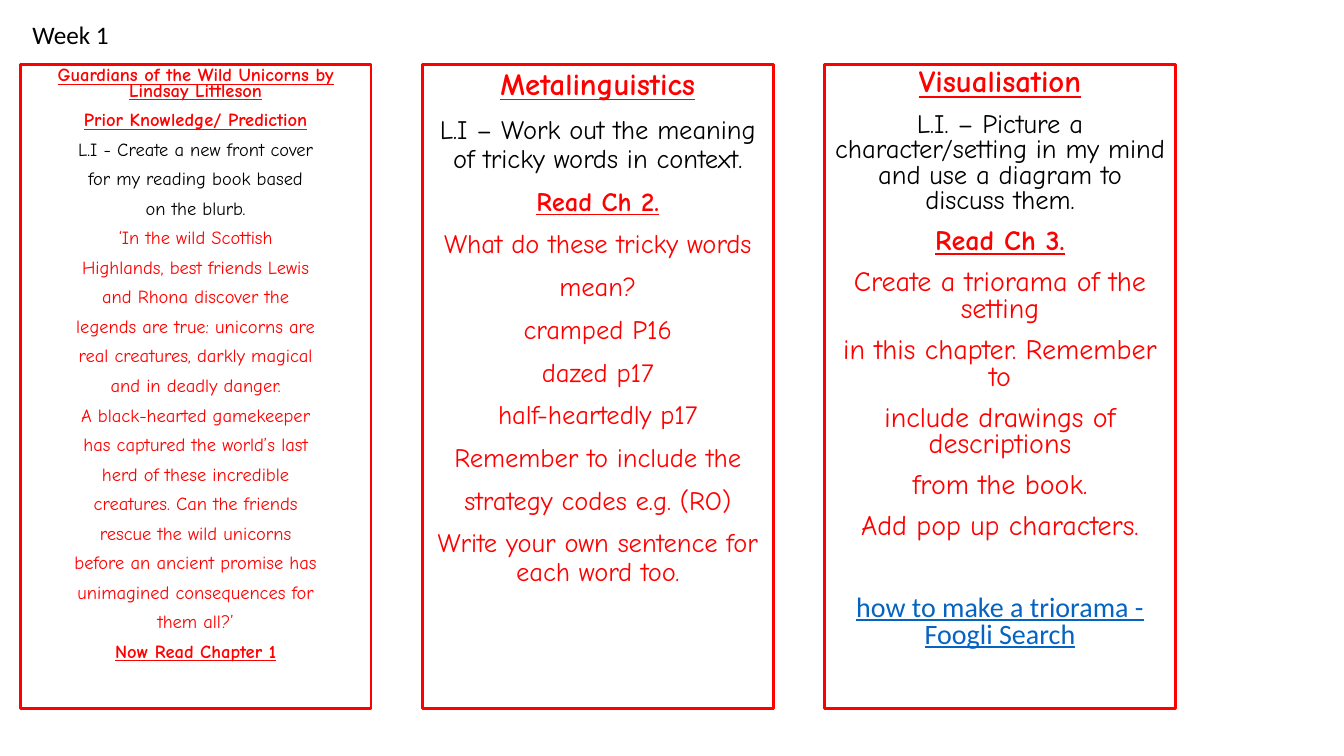
"""Build the Week 1 reading lesson slide with three task panels."""
from dataclasses import dataclass

from pptx import Presentation
from pptx.dml.color import RGBColor
from pptx.enum.shapes import MSO_SHAPE
from pptx.enum.text import MSO_ANCHOR, MSO_AUTO_SIZE, PP_ALIGN
from pptx.slide import Slide
from pptx.text.text import _Paragraph as Paragraph
from pptx.util import Pt

RECTANGLE = MSO_SHAPE.RECTANGLE
TOP = MSO_ANCHOR.TOP
CENTER = PP_ALIGN.CENTER
FIT_SHAPE = MSO_AUTO_SIZE.SHAPE_TO_FIT_TEXT

COLORS = {"red": "FF0000", "black": "000000", "link": "0563C1"}
LESSON_FONT = "Comic Neue"
PLAIN_FONT = "Calibri"

PANEL_LEFT, PANEL_TOP = 14.4, 46
PANEL_WIDTH, PANEL_HEIGHT = 250.6, 460
PANEL_STEP = 287.3
PARAGRAPH_GAP = 10


@dataclass(frozen=True)
class Line:
    text: str
    size: float
    color: str = "red"
    bold: bool = False
    underline: bool = False
    font: str = LESSON_FONT
    space_before: float = PARAGRAPH_GAP


@dataclass(frozen=True)
class Panel:
    line_spacing: float
    lines: list[Line]


def heading(text: str, size: float) -> Line:
    """Return a bold, underlined red line."""
    return Line(text, size, bold=True, underline=True)


def body(texts: list[str], size: float, color: str = "red") -> list[Line]:
    """Return plain lines that share a size and colour."""
    return [Line(text, size, color) for text in texts]


PANELS = [
    Panel(0.7, [
        heading("Guardians of the Wild Unicorns by Lindsay Littleson", 13.2),
        heading("Prior Knowledge/ Prediction", 13.2),
        *body([
            "L.I - Create a new front cover",
            "for my reading book based",
            "on the blurb.",
        ], 13.2, "black"),
        *body([
            "‘In the wild Scottish",
            "Highlands, best friends Lewis",
            "and Rhona discover the",
            "legends are true: unicorns are",
            "real creatures, darkly magical",
            "and in deadly danger.",
            "A black-hearted gamekeeper",
            "has captured the world’s last",
            "herd of these incredible",
            "creatures. Can the friends",
            "rescue the wild unicorns",
            "before an ancient promise has",
            "unimagined consequences for",
            "them all?’",
        ], 13.2),
        heading("Now Read Chapter 1", 13.2),
    ]),
    Panel(0.9, [
        heading("Metalinguistics", 22),
        Line("L.I – Work out the meaning of tricky words in context.", 19, "black"),
        heading("Read Ch 2.", 19),
        *body([
            "What do these tricky words",
            "mean?",
            "cramped P16",
            "dazed p17",
            "half-heartedly p17",
            "Remember to include the",
            "strategy codes e.g. (RO)",
            "Write your own sentence for each word too.",
        ], 19),
    ]),
    Panel(0.8, [
        heading("Visualisation", 22),
        Line("L.I. – Picture a character/setting in my mind and use a diagram "
             "to discuss them.", 19, "black"),
        heading("Read Ch 3.", 20),
        *body([
            "Create a triorama of the setting",
            "in this chapter. Remember to",
            "include drawings of descriptions",
            "from the book.",
            "Add pop up characters.",
        ], 20),
        Line("how to make a triorama - Foogli Search", 20, "link",
             underline=True, font=PLAIN_FONT, space_before=39),
    ]),
]


def write_line(paragraph: Paragraph, line: Line) -> None:
    """Fill a paragraph with one formatted line."""
    paragraph.text = line.text
    font = paragraph.runs[0].font
    font.name = line.font
    font.size = Pt(line.size)
    font.bold = line.bold
    font.underline = line.underline
    font.color.rgb = RGBColor.from_string(COLORS[line.color])


def draw_panel(slide: Slide, panel: Panel, left: float) -> None:
    """Draw one red-outlined panel with its lines."""
    shape = slide.shapes.add_shape(
        RECTANGLE, Pt(left), Pt(PANEL_TOP), Pt(PANEL_WIDTH), Pt(PANEL_HEIGHT))
    shape.shadow.inherit = False
    shape.fill.background()
    shape.line.color.rgb = RGBColor.from_string(COLORS["red"])
    shape.line.width = Pt(2)
    text_frame = shape.text_frame
    text_frame.word_wrap = True
    text_frame.vertical_anchor = TOP
    text_frame.text = "\n".join(line.text for line in panel.lines)
    for paragraph, line in zip(text_frame.paragraphs, panel.lines):
        write_line(paragraph, line)
        paragraph.alignment = CENTER
        paragraph.line_spacing = panel.line_spacing
        paragraph.space_before = Pt(line.space_before)


def draw_week_label(slide: Slide) -> None:
    """Draw the week label above the panels."""
    label = slide.shapes.add_textbox(Pt(16), Pt(10), Pt(140), Pt(29))
    text_frame = label.text_frame
    text_frame.word_wrap = True
    text_frame.auto_size = FIT_SHAPE
    write_line(text_frame.paragraphs[0], Line("Week 1", 18, "black", font=PLAIN_FONT))


def main() -> None:
    """Build and save the presentation."""
    presentation = Presentation()
    presentation.slide_width = Pt(960)
    presentation.slide_height = Pt(540)
    slide = presentation.slides.add_slide(presentation.slide_layouts[6])
    for index, panel in enumerate(PANELS):
        draw_panel(slide, panel, PANEL_LEFT + index * PANEL_STEP)
    draw_week_label(slide)
    presentation.save("out.pptx")


if __name__ == "__main__":
    main()
